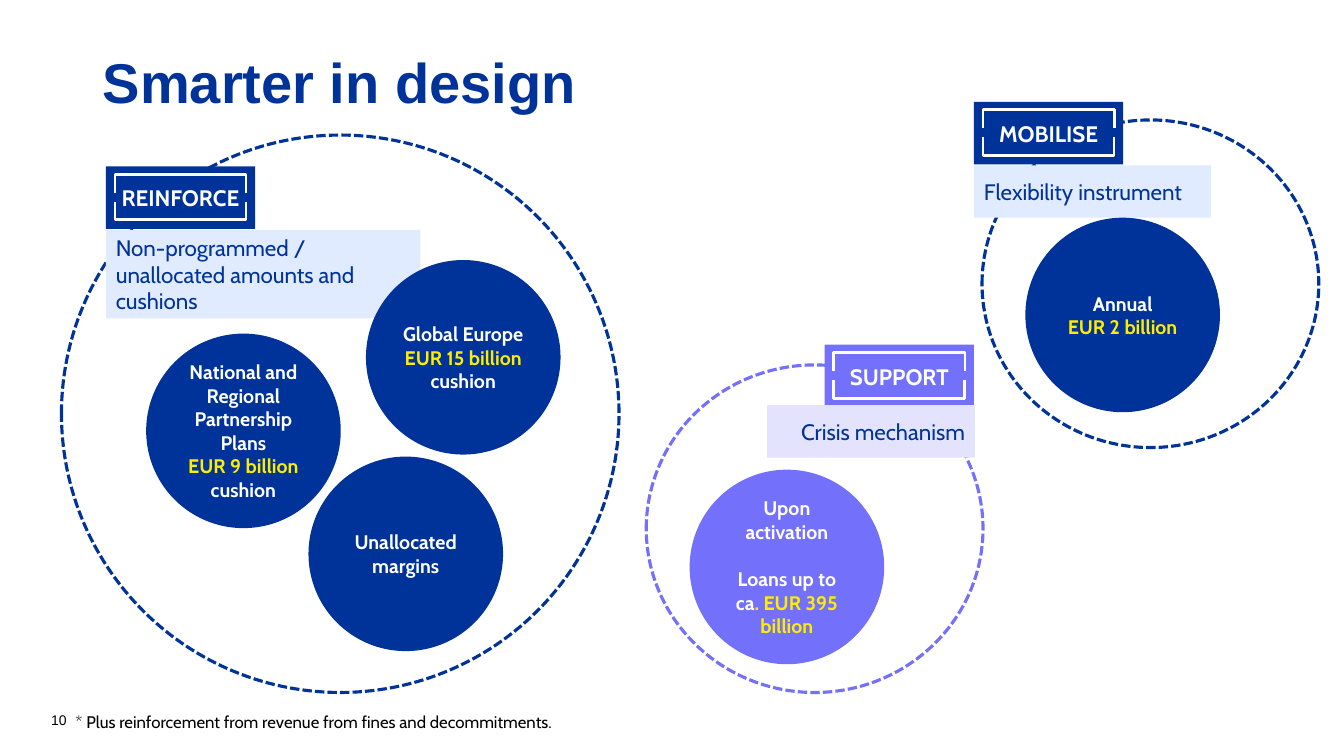
from dataclasses import dataclass

import pptx
import pptx.dml.color
import pptx.enum.dml
import pptx.enum.shapes
import pptx.enum.text
import pptx.util

Shape = pptx.enum.shapes.MSO_SHAPE
Align = pptx.enum.text.PP_ALIGN
Anchor = pptx.enum.text.MSO_ANCHOR
Pt = pptx.util.Pt
Box = tuple[int, int, int, int]  # left, top, width, height in px
Runs = list[tuple[str, str]]  # text and colour

PX = 9144  # EMU per px, 100 px to the inch
DISK = 193


@dataclass(frozen=True)
class Theme:
    blue: str = "003399"
    violet: str = "7371FC"
    sky: str = "E1EBFF"
    lilac: str = "E3E3FE"
    gold: str = "FFED00"
    white: str = "FFFFFF"
    black: str = "000000"
    head: str = "Arial"
    body: str = "Cabin"
    title: int = 40
    label: int = 16
    disk: int = 14
    note: int = 12
    page: int = 10


T = Theme()


@dataclass
class Disk:
    left: int
    top: int
    paras: list[Runs]
    inset: tuple[int, int] = (4, 4)
    gap: int = 0  # points between paragraphs


@dataclass
class Cluster:
    ring: Box
    badge: tuple[int, int]
    name: str
    label: Box
    text: str
    disks: list[Disk]
    color: str = T.blue
    tint: str = T.sky
    align: Align = Align.LEFT


CLUSTERS = [
    Cluster((61, 134, 553, 553), (105, 165), "REINFORCE", (105, 228, 312, 88),
            "Non-programmed / unallocated amounts and cushions", [
                Disk(145, 331, [
                    [("National and Regional Partnership Plans", T.white)],
                    [("EUR 9 billion ", T.gold), ("cushion", T.white)]]),
                Disk(306, 453, [[("Unallocated margins", T.white)]]),
                Disk(363, 258, [
                    [("Global Europe", T.white)],
                    [("EUR 15 billion ", T.gold), ("cushion", T.white)]])]),
    Cluster((974, 119, 334, 325), (966, 101), "MOBILISE", (966, 164, 235, 52),
            "Flexibility instrument", [
                Disk(1017, 216, [
                    [("Annual", T.white)],
                    [("EUR 2 billion", T.gold)]], (10, 5))]),
    Cluster((641, 362, 334, 325), (818, 342), "SUPPORT", (761, 402, 206, 52),
            "Crisis mechanism", [
                Disk(684, 466, [
                    [("Upon activation", T.white)],
                    [("Loans up to ca", T.white), (". EUR 395 billion", T.gold)]],
                    (10, 5), 17)],
            T.violet, T.lilac, Align.RIGHT),
]


def rgb(color: str) -> pptx.dml.color.RGBColor:
    return pptx.dml.color.RGBColor.from_string(color)


def emu(box: Box) -> list[int]:
    return [side * PX for side in box]


def write(shape, paras: list[Runs], size: int, face: str = T.body, bold: bool = False,
          align: Align = Align.LEFT, anchor: Anchor = Anchor.MIDDLE,
          inset: tuple[int, int] = (10, 5), gap: int = 0) -> None:
    frame = shape.text_frame
    frame.word_wrap = True
    frame.vertical_anchor = anchor
    frame.margin_left = frame.margin_right = inset[0] * PX
    frame.margin_top = frame.margin_bottom = inset[1] * PX
    for i, runs in enumerate(paras):
        para = frame.add_paragraph() if i else frame.paragraphs[0]
        para.alignment = align
        if i and gap:
            para.space_before = Pt(gap)
        font = para.font
        font.name, font.size, font.bold = face, Pt(size), bold
        if len(runs) == 1:
            font.color.rgb = rgb(runs[0][1])
        for text, color in runs:
            run = para.add_run()
            run.text = text
            # Autoshape style colour yields only to a colour on the run
            run.font.color.rgb = rgb(color)


def draw(slide, kind: Shape, box: Box, fill: str = "", line: str = "", width: float = 0):
    shape = slide.shapes.add_shape(kind, *emu(box))
    shape.shadow.inherit = False
    if fill:
        shape.fill.solid()
        shape.fill.fore_color.rgb = rgb(fill)
    else:
        shape.fill.background()
    if line:
        shape.line.color.rgb = rgb(line)
        shape.line.width = Pt(width)
    else:
        shape.line.fill.background()
    return shape


def add_text(slide, box: Box, text: str, size: int, color: str, **style) -> None:
    write(slide.shapes.add_textbox(*emu(box)), [[(text, color)]], size, **style)


def add_badge(slide, left: int, top: int, name: str, color: str) -> None:
    draw(slide, Shape.RECTANGLE, (left, top, 148, 62), color)
    for turn, rise in ((270, -21), (90, -48)):
        frame = draw(slide, Shape.LEFT_BRACKET, (left + 65, top + rise, 18, 130),
                     line=T.white, width=2)
        frame.adjustments[0] = 0
        frame.rotation = turn
    add_text(slide, (left + 9, top + 13, 130, 41), name, T.label, T.white,
             bold=True, align=Align.CENTER, anchor=Anchor.TOP, inset=(0, 5))


def add_cluster(slide, item: Cluster) -> None:
    ring = draw(slide, Shape.OVAL, item.ring, line=item.color, width=2.25)
    ring.line.dash_style = pptx.enum.dml.MSO_LINE.SQUARE_DOT
    add_badge(slide, *item.badge, item.name, item.color)
    label = draw(slide, Shape.RECTANGLE, item.label, item.tint)
    write(label, [[(item.text, T.blue)]], T.label, align=item.align, inset=(10, 0))
    for disk in item.disks:
        oval = draw(slide, Shape.OVAL, (disk.left, disk.top, DISK, DISK), item.color)
        write(oval, disk.paras, T.disk, bold=True, align=Align.CENTER,
              inset=disk.inset, gap=disk.gap)


def main() -> None:
    deck = pptx.Presentation()
    deck.slide_width, deck.slide_height = 1333 * PX, 750 * PX
    slide = deck.slides.add_slide(deck.slide_layouts[5])

    # Title
    title = slide.shapes.title
    title.left, title.top, title.width, title.height = emu((92, 40, 1190, 89))
    write(title, [[("Smarter in design", T.blue)]], T.title, T.head, bold=True)
    title.text_frame.auto_size = pptx.enum.text.MSO_AUTO_SIZE.NONE
    title.text_frame.paragraphs[0].line_spacing = 0.9

    # Rings with their badges, labels and disks
    for item in CLUSTERS:
        add_cluster(slide, item)

    # Footnote and page number
    add_text(slide, (65, 701, 667, 30),
             "* Plus reinforcement from revenue from fines and decommitments.",
             T.note, T.black, anchor=Anchor.TOP)
    add_text(slide, (41, 687, 300, 40), "10", T.page, T.black,
             face=T.head, anchor=Anchor.BOTTOM)

    deck.save("out.pptx")


if __name__ == "__main__":
    main()
